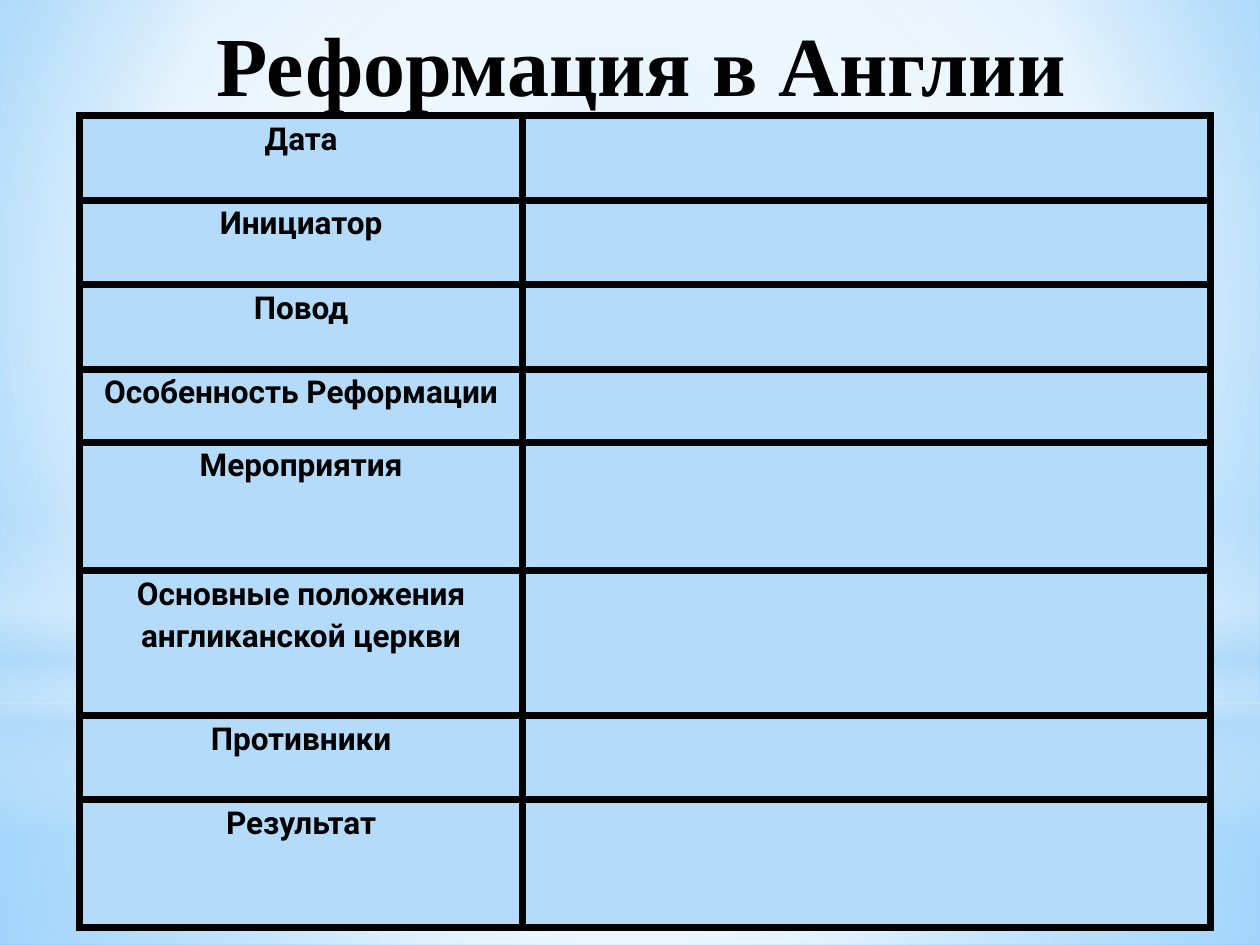
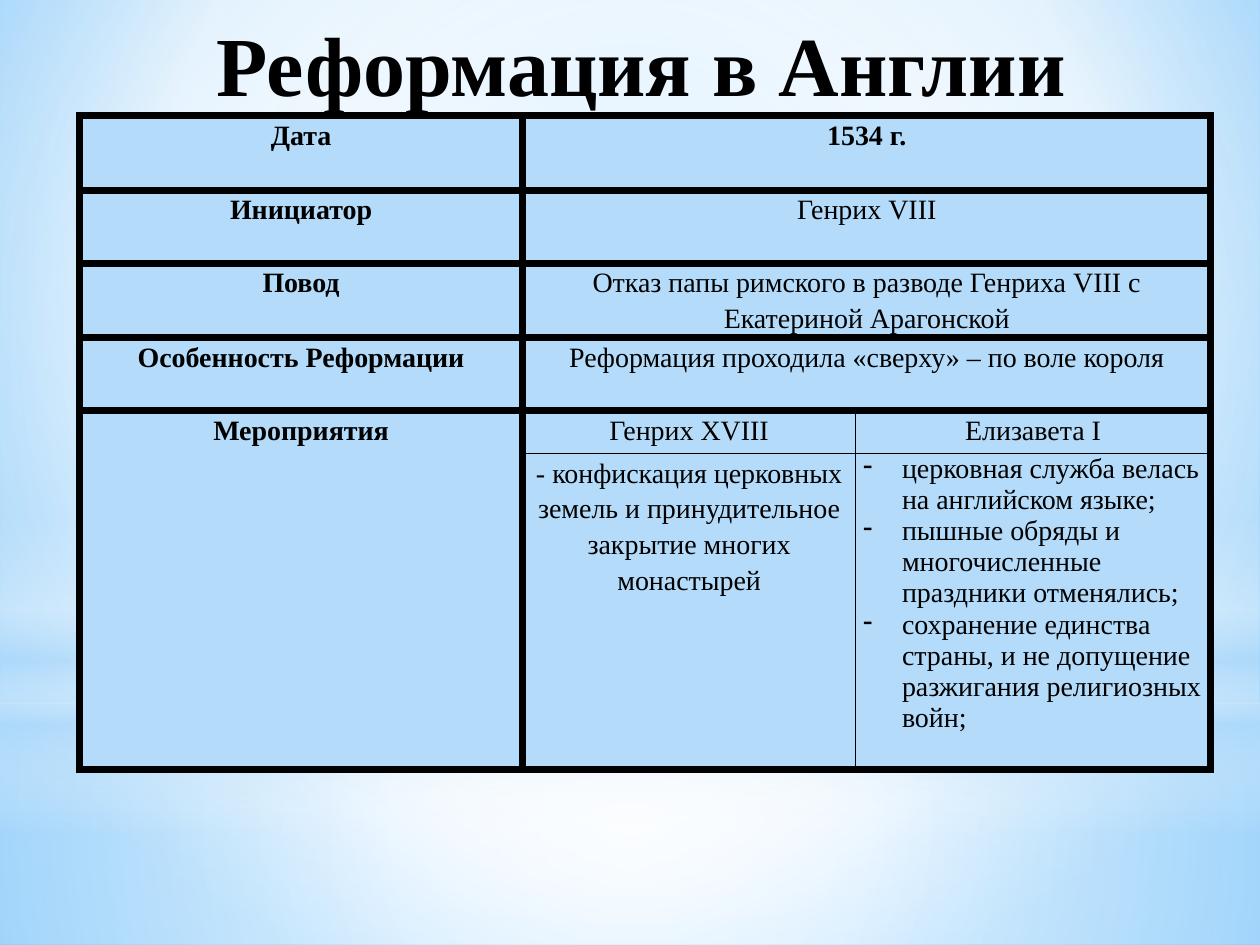
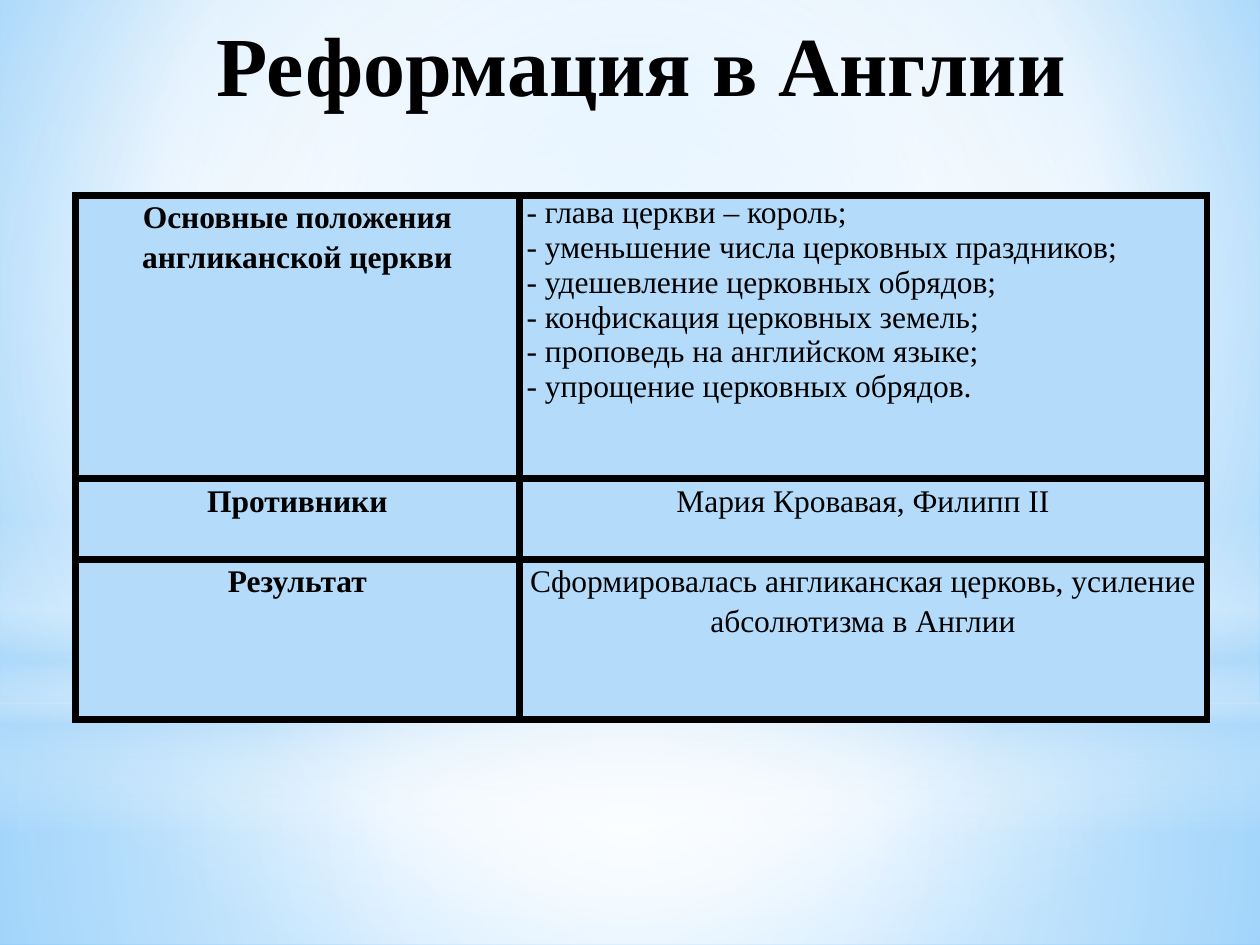
from lxml.etree import SubElement as Sub
from pptx import Presentation
from pptx.dml.color import RGBColor as Rgb
from pptx.enum.shapes import MSO_SHAPE as Kind
from pptx.enum.text import MSO_ANCHOR as Anchor, MSO_AUTO_SIZE as Auto, PP_ALIGN as Align
from pptx.oxml.ns import qn
from pptx.util import Inches as In, Pt

HUE = {"ink": "000000", "cell": "B4DCFA", "white": "FFFFFF", "sky": "9ED5FF", "deep": "5BB9FF"}
SERIF = "Times New Roman"
TITLE = "Реформация в Англии"
WIDE, HIGH = 10, 7.5
MID = (50, 50, 50, 50)


def blend(grad, stops, focus):
    grad.clear()
    grad.set("rotWithShape", "1")
    group = Sub(grad, qn("a:gsLst"))
    for pos, hue, alpha in stops:
        stop = Sub(group, qn("a:gs"), pos=str(pos * 1000))
        tint = Sub(stop, qn("a:srgbClr"), val=HUE[hue])
        Sub(tint, qn("a:alpha"), val=str(alpha * 1000))
    if focus:
        ring = Sub(grad, qn("a:path"), path="circle")
        Sub(ring, qn("a:fillToRect"), {side: str(part * 1000) for side, part in zip("ltrb", focus)})
    else:
        Sub(grad, qn("a:lin"), ang="5400000", scaled="0")


def write(para, text, font, size, bold):
    run = para.add_run()
    run.text = text
    run.font.name = font
    run.font.size = Pt(size)
    run.font.bold = bold
    run.font.color.rgb = Rgb.from_string(HUE["ink"])


deck = Presentation()
deck.slide_width, deck.slide_height = In(WIDE), In(HIGH)
master = deck.slide_master
master.background.fill.gradient()
blend(master.element.find(".//" + qn("a:gradFill")),
      [(0, "sky", 100), (60, "white", 100), (100, "deep", 100)], (20, 10, 20, 60))

GLOWS = [
    (Kind.RECTANGLE, 5.58, 1.92, [(0, "white", 91), (37, "white", 76), (100, "cell", 79)], MID),
    (Kind.RECTANGLE, 0, 5.58, [(0, "white", 89), (48, "white", 62), (100, "cell", 79)], MID),
    (Kind.RECTANGLE, 4.12, 2.5, [(0, "white", 0), (29, "white", 30), (45, "cell", 40),
                                 (55, "white", 26), (65, "cell", 60), (100, "white", 0)], None),
    (Kind.OVAL, 1.75, 5.58, [(0, "white", 100), (56, "white", 0)], MID),
]

PAGES = [
    {"at": (0.63, 0.92), "font": "Roboto", "size": 18, "cols": [3.52, 5.46],
     "high": [0.67, 0.67, 0.67, 0.58, 1.02, 1.15, 0.67, 1.01],
     "rows": [["Дата", ""], ["Инициатор", ""], ["Повод", ""], ["Особенность Реформации", ""],
              ["Мероприятия", ""], ["Основные положения англиканской церкви", ""],
              ["Противники", ""], ["Результат", ""]]},
    {"at": (0.63, 0.92), "font": SERIF, "size": 16, "cols": [3.52, 2.64, 2.82],
     "high": [0.59, 0.58, 0.59, 0.58, 0.34, 2.51],
     "rows": [["Дата", "1534 г."],
              ["Инициатор", "Генрих VIII"],
              ["Повод", "Отказ папы римского в разводе Генриха VIII с Екатериной Арагонской"],
              ["Особенность Реформации", "Реформация проходила «сверху» – по воле короля"],
              ["Мероприятия", "Генрих XVIII", "Елизавета I"],
              ["", "- конфискация церковных земель и принудительное закрытие многих монастырей",
               ["церковная служба велась на английском языке;",
                "пышные обряды и многочисленные праздники отменялись;",
                "сохранение единства страны, и не допущение разжигания религиозных войн;"]]]},
    {"at": (0.6, 1.55), "font": SERIF, "size": 18, "cols": [3.52, 5.46],
     "high": [2.25, 0.64, 1.27],
     "rows": [["Основные положения англиканской церкви",
               ["- глава церкви – король;", "- уменьшение числа церковных праздников;",
                "- удешевление церковных обрядов;", "- конфискация церковных земель;",
                "- проповедь на английском языке;", "- упрощение церковных обрядов."]],
              ["Противники", "Мария Кровавая, Филипп II"],
              ["Результат", "Сформировалась англиканская церковь, усиление абсолютизма в Англии"]]},
]

for page in PAGES:
    slide = deck.slides.add_slide(deck.slide_layouts[5])

    if page is PAGES[0]:
        for num, (kind, top, high, stops, focus) in enumerate(GLOWS):
            glow = slide.shapes.add_shape(kind, 0, In(top), In(WIDE), In(high))
            glow.shadow.inherit = False
            glow.line.fill.background()
            glow.fill.gradient()
            blend(glow.element.spPr.find(qn("a:gradFill")), stops, focus)
            glow.element.nvSpPr.cNvPr.id = 20 + num
            master.shapes.element.insert(2 + num, glow.element)

    title = slide.shapes.title
    title.left, title.top, title.width, title.height = In(1.57), 0, In(7.04), In(1.82)
    frame = title.text_frame
    frame.auto_size = Auto.NONE
    frame.word_wrap = False
    frame.vertical_anchor = Anchor.TOP
    frame.margin_top = In(0.1)
    frame.paragraphs[0].alignment = Align.CENTER
    write(frame.paragraphs[0], TITLE, SERIF, 48, True)

    cols, rows = page["cols"], page["rows"]
    left, top = page["at"]
    table = slide.shapes.add_table(len(rows), len(cols), In(left), In(top),
                                   In(sum(cols)), In(sum(page["high"]))).table
    table.first_row = table.horz_banding = False
    for col, wide in zip(table.columns, cols):
        col.width = In(wide)
    for row, high in zip(table.rows, page["high"]):
        row.height = In(high)

    for r, items in enumerate(rows):
        for c in range(len(cols)):
            cell = table.cell(r, c)
            cell.margin_left = cell.margin_right = In(0.06)
            cell.margin_top = cell.margin_bottom = 0
            thin = {(4, 1): "RB", (4, 2): "LB", (5, 1): "RT", (5, 2): "LT"}.get((r, c), "")
            if len(cols) < 3:
                thin = ""
            for side in "LRTB":
                edge = Sub(cell._tc.get_or_add_tcPr(), qn("a:ln" + side),
                           w=str(Pt(1 if side in thin else 4.5)))
                Sub(Sub(edge, qn("a:solidFill")), qn("a:srgbClr"), val=HUE["ink"])
            cell.fill.solid()
            cell.fill.fore_color.rgb = Rgb.from_string(HUE["cell"])

        if len(items) < len(cols):
            table.cell(r, 1).merge(table.cell(r, len(cols) - 1))
        if not items[0]:
            table.cell(r - 1, 0).merge(table.cell(r, 0))

        for c, item in enumerate(items):
            if not item:
                continue
            frame = table.cell(r, c).text_frame
            listed = isinstance(item, list)
            for n, text in enumerate(item if listed else [item]):
                para = frame.add_paragraph() if n else frame.paragraphs[0]
                if not listed:
                    para.alignment = Align.CENTER
                    para.line_spacing = 1.15
                elif not text.startswith("-"):
                    props = para._p.get_or_add_pPr()
                    props.set("marL", str(In(0.31)))
                    props.set("indent", str(-In(0.31)))
                    Sub(props, qn("a:buChar"), char="-")
                write(para, text, page["font"], page["size"], c == 0 or text == "1534 г.")

deck.save("out.pptx")
